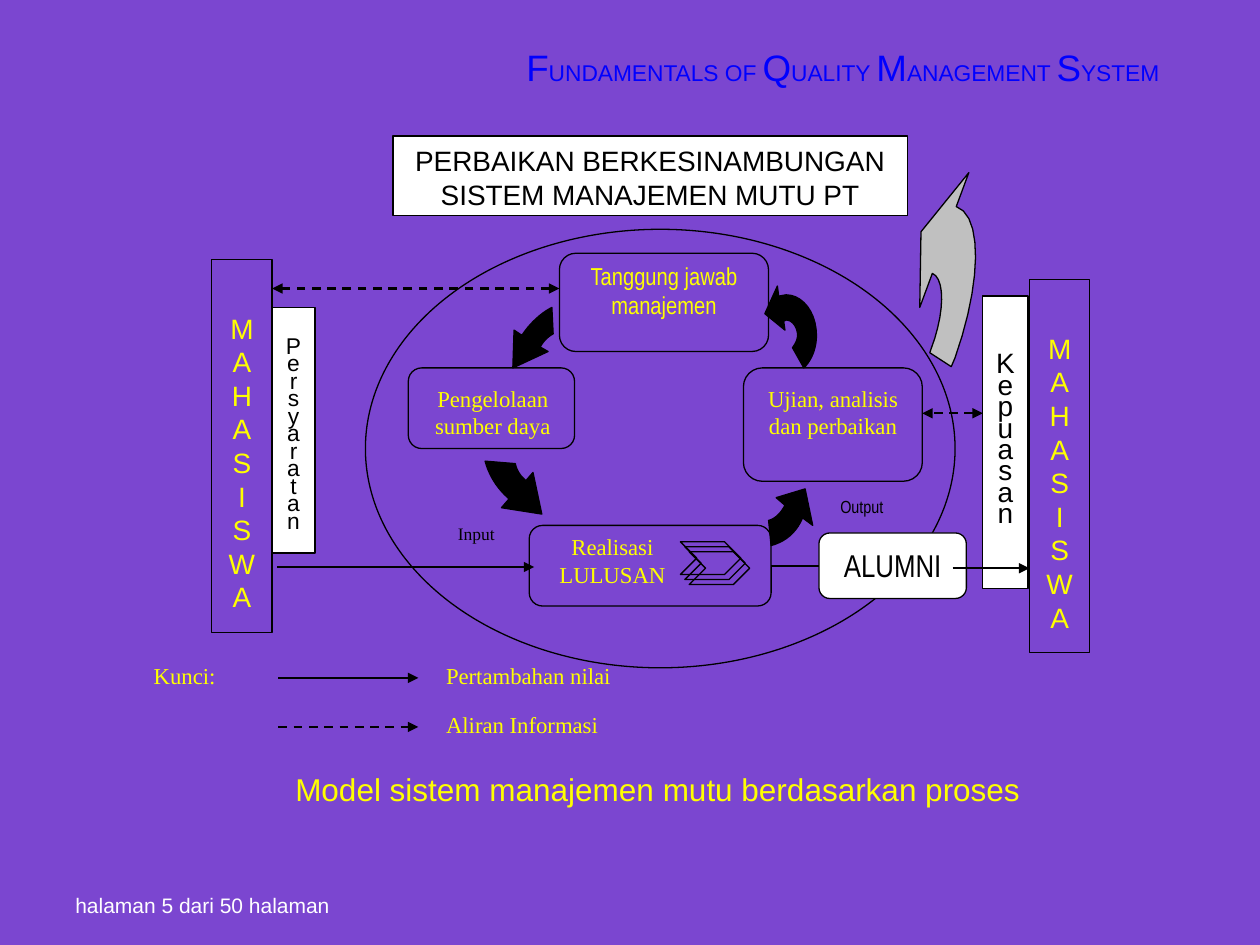
from dataclasses import dataclass

from pptx import Presentation
from pptx.dml.color import RGBColor
from pptx.enum.dml import MSO_LINE
from pptx.enum.shapes import MSO_CONNECTOR, MSO_SHAPE
from pptx.enum.text import MSO_ANCHOR, PP_ALIGN
from pptx.oxml.ns import qn
from pptx.util import Inches, Pt
from lxml.etree import SubElement

PURPLE = RGBColor(0x7B, 0x46, 0xD0)
BLUE = RGBColor(0x00, 0x00, 0xFF)
YELLOW = RGBColor(0xFF, 0xFF, 0x00)
BLACK = RGBColor(0x00, 0x00, 0x00)
WHITE = RGBColor(0xFF, 0xFF, 0xFF)
SILVER = RGBColor(0xC0, 0xC0, 0xC0)
SANS, NARROW, SERIF = "Arial", "Arial Narrow", "Times New Roman"

# Outlines: a start point, then lines (x, y) and curves (two controls, end).
CYCLE_ARROWS = [
    [(1.38, .93), (1.39, .93), (1.41, .89, 1.45, .85, 1.49, .83), (1.48, .62),
     (1.4, .66, 1.31, .74, 1.25, .83), (1.24, .84), (1.18, .8), (1.17, 1.1), (1.45, .97)],
    [(1.27, 2), (1.27, 1.99), (1.23, 1.96, 1.2, 1.91, 1.19, 1.86), (.95, 1.84),
     (.98, 1.95, 1.04, 2.05, 1.13, 2.13), (1.14, 2.14), (1.08, 2.21), (1.4, 2.26), (1.33, 1.93)],
    [(3.33, 2.19), (3.3, 2.25, 3.25, 2.3, 3.2, 2.31), (3.22, 2.51),
     (3.33, 2.48, 3.42, 2.41, 3.47, 2.29), (3.55, 2.35), (3.49, 2.06), (3.26, 2.13)],
    [(3.32, .73), (3.34, .72), (3.39, .72, 3.43, .78, 3.43, .84),
     (3.43, .88, 3.41, .91, 3.39, .94), (3.48, 1.1), (3.54, 1.04, 3.58, .95, 3.58, .84),
     (3.58, .66, 3.47, .52, 3.34, .52), (3.28, .53), (3.27, .45), (3.17, .67), (3.33, .8)],
]
IMPROVEMENT_ARROW = [
    (.1, .8), (.2, .84, .2, 1.11, .09, 1.4), (.08, 1.43), (.25, 1.54), (.28, 1.47),
    (.49, .88, .5, .34, .29, .27), (.39, 0), (.01, .47), (0, 1.07)]


@dataclass
class Box:
    """A region of the slide, in inches."""
    left: float
    top: float
    width: float
    height: float

    def inner(self, left, top, width, height):
        return Box(self.left + left, self.top + top, width, height)

    def lengths(self):
        return [Inches(v) for v in (self.left, self.top, self.width, self.height)]


def write(shape, *paragraphs, font=SANS, size=13, color=BLACK, align=PP_ALIGN.CENTER,
          anchor=MSO_ANCHOR.TOP, insets=(0, 0, 0, 0), spacing=None):
    """Fill a shape; a paragraph is a string or a list of (text, size) runs."""
    frame = shape.text_frame
    frame.word_wrap = True
    frame.vertical_anchor = anchor
    (frame.margin_left, frame.margin_top,
     frame.margin_right, frame.margin_bottom) = [Inches(v) for v in insets]
    for index, content in enumerate(paragraphs):
        paragraph = frame.paragraphs[0] if index == 0 else frame.add_paragraph()
        paragraph.alignment = align
        if spacing:
            paragraph.line_spacing = spacing
        for text, points in [(content, size)] if isinstance(content, str) else content:
            run = paragraph.add_run()
            run.text = text
            run.font.name, run.font.size = font, Pt(points)
            run.font.color.rgb = color


def add_label(slide, box, text, **style):
    write(slide.shapes.add_textbox(*box.lengths()), text, **style)


def paint(shape, fill=None, line=BLACK):
    shape.shadow.inherit = False
    if fill is None:
        shape.fill.background()
    else:
        shape.fill.solid()
        shape.fill.fore_color.rgb = fill
    if line is None:
        shape.line.fill.background()
    else:
        shape.line.color.rgb = line
        shape.line.width = Pt(0.75)
    return shape


def add_box(slide, box, preset=MSO_SHAPE.RECTANGLE, **colors):
    return paint(slide.shapes.add_shape(preset, *box.lengths()), **colors)


def add_outline(slide, box, outline, fill):
    """Draw a closed outline, with its curves cut into short lines."""
    points = []
    for segment in outline:
        if len(segment) == 2:
            points.append(segment)
            continue
        x0, y0 = points[-1]
        x1, y1, x2, y2, x3, y3 = segment
        for t in (step / 10 for step in range(1, 11)):
            a, b, c, d = (1 - t) ** 3, 3 * t * (1 - t) ** 2, 3 * t * t * (1 - t), t ** 3
            points.append((a * x0 + b * x1 + c * x2 + d * x3,
                           a * y0 + b * y1 + c * y2 + d * y3))
    start, *rest = [(Inches(box.left + x), Inches(box.top + y)) for x, y in points]
    builder = slide.shapes.build_freeform(*start)
    builder.add_line_segments(rest, close=True)
    paint(builder.convert_to_shape(), fill=fill)


def add_flow(slide, box, start, end, dashed=False, arrows=("tailEnd",)):
    (x1, y1), (x2, y2) = start, end
    flow = slide.shapes.add_connector(
        MSO_CONNECTOR.STRAIGHT, Inches(box.left + x1), Inches(box.top + y1),
        Inches(box.left + x2), Inches(box.top + y2))
    flow.line.color.rgb = BLACK
    flow.line.width = Pt(1.25)
    if dashed:
        flow.line.dash_style = MSO_LINE.DASH
    for arrow in arrows:
        SubElement(flow.line._get_or_add_ln(), qn(f"a:{arrow}"), type="triangle")
    SubElement(flow._element.spPr, qn("a:effectLst"))
    return flow


def add_title(slide, box):
    title = slide.shapes.title
    title.left, title.top, title.width, title.height = box.lengths()
    small_caps = [("F", 21), ("UNDAMENTALS OF ", 13), ("Q", 21), ("UALITY ", 13),
                  ("M", 21), ("ANAGEMENT ", 13), ("S", 21), ("YSTEM", 13)]
    write(title, small_caps, color=BLUE, align=PP_ALIGN.RIGHT,
          anchor=MSO_ANCHOR.MIDDLE, insets=(.1, .05, .1, .05))


def add_letter_column(slide, box, word, fill=None, top_inset=.06, **style):
    """A tall box with one letter of the word on each line."""
    write(add_box(slide, box, fill=fill), *word, insets=(.06, top_inset, .06, .06), **style)


def add_cycle(slide, box):
    """The process ellipse with its four stages and the arrows between them."""
    add_box(slide, box, MSO_SHAPE.OVAL)

    def add_stage(place, text, insets, font=SERIF, size=13):
        stage = add_box(slide, box.inner(*place), MSO_SHAPE.ROUNDED_RECTANGLE)
        write(stage, text, font=font, size=size, color=YELLOW, insets=insets)
        return stage

    add_stage((1.54, .19, 1.66, .78), "Tanggung jawab manajemen", (.15, .02, .15, 0), NARROW, 14)
    add_stage((.34, 1.1, 1.32, .64), "Pengelolaan sumber daya", (.08, .1, .06, 0))
    add_stage((3, 1.1, 1.42, .9), "Ujian, analisis dan perbaikan", (.13, .09, .13, 0))
    realization = add_stage((1.3, 2.35, 1.92, .64), "Realisasi LULUSAN", (.15, .03, .75, 0))
    for step in range(3):
        add_box(slide, box.inner(2.5 + .035 * step, 2.48 + .04 * step, .48, .26),
                MSO_SHAPE.CHEVRON)

    alumni = add_box(slide, box.inner(3.6, 2.41, 1.17, .52),
                     MSO_SHAPE.ROUNDED_RECTANGLE, fill=WHITE)
    panel = add_box(slide, box.inner(3.69, 2.51, .99, .41), fill=WHITE, line=None)
    write(panel, "ALUMNI", font=NARROW, size=18, insets=(.06, 0, .06, 0))
    graduation = add_flow(slide, box, (3.22, 2.67), (3.6, 2.67), arrows=())
    graduation.begin_connect(realization, 3)
    graduation.end_connect(alumni, 1)

    add_label(slide, box.inner(.58, 2.33, .6, .26), "Input", font=SERIF, size=10)
    add_label(slide, box.inner(3.58, 2.12, .72, .26), "Output", font=NARROW, size=10)
    for outline in CYCLE_ARROWS:
        add_outline(slide, box, outline, BLACK)


def add_process_model(slide, box):
    """Students on both sides of the cycle, and the flows that join them."""
    heading = add_box(slide, box.inner(1.44, 0, 4.08, .63), fill=WHITE)
    write(heading, "PERBAIKAN BERKESINAMBUNGAN SISTEM MANAJEMEN MUTU PT",
          size=16, insets=(.06,) * 4)
    add_cycle(slide, box.inner(1.22, .74, 4.68, 3.48))
    for left, top in ((0, .98), (6.49, 1.14)):
        add_letter_column(slide, box.inner(left, top, .48, 2.96), "MAHASISWA", size=16,
                          color=YELLOW, anchor=MSO_ANCHOR.MIDDLE, top_inset=.32)
    add_letter_column(slide, box.inner(.48, 1.36, .34, 1.95), "Persyaratan", fill=WHITE,
                      spacing=.64, top_inset=.26)
    add_letter_column(slide, box.inner(6.12, 1.27, .36, 2.32), "Kepuasan", fill=WHITE,
                      size=16, spacing=.64, anchor=MSO_ANCHOR.MIDDLE)
    both_ends = ("headEnd", "tailEnd")
    add_flow(slide, box, (2.76, 1.21), (.48, 1.21), dashed=True, arrows=both_ends)
    add_flow(slide, box, (6.12, 2.2), (5.64, 2.2), dashed=True, arrows=both_ends)
    add_flow(slide, box, (.52, 3.42), (2.56, 3.42))
    add_flow(slide, box, (5.88, 3.43), (6.49, 3.43))
    add_outline(slide, box.inner(5.62, .29, .5, 1.54), IMPROVEMENT_ARROW, SILVER)


def add_legend(slide, box):
    style = dict(font=SERIF, color=YELLOW, align=PP_ALIGN.LEFT, insets=(.22, 0, .22, .11))
    add_label(slide, box.inner(0, 0, 1.21, .32), "Kunci:", **style)
    for row, meaning in enumerate(("Pertambahan nilai", "Aliran Informasi")):
        top = .39 * row
        add_flow(slide, box, (1.21, top + .13), (2.32, top + .13), dashed=row == 1)
        add_label(slide, box.inner(2.32, top, 1.93, .33), meaning, **style)


def main():
    deck = Presentation()
    deck.slide_width, deck.slide_height = Inches(10), Inches(7.5)
    slide = deck.slides.add_slide(deck.slide_layouts[5])
    slide.background.fill.solid()
    slide.background.fill.fore_color.rgb = PURPLE
    add_title(slide, Box(.8, .21, 8.5, .64))
    add_process_model(slide, Box(1.68, 1.08, 6.97, 4.22))
    add_legend(slide, Box(1, 5.25, 4.25, .76))
    add_label(slide, Box(1.68, 6.05, 7.08, .39),
              "Model sistem manajemen mutu berdasarkan proses",
              size=18, color=YELLOW, insets=(.13, .06, .13, .06))
    add_label(slide, Box(.5, 6.83, 2.33, .5), "halaman 5 dari 50 halaman", size=12,
              color=WHITE, align=PP_ALIGN.LEFT, anchor=MSO_ANCHOR.BOTTOM,
              insets=(.1, .05, .1, .05))
    deck.save("out.pptx")


if __name__ == "__main__":
    main()
